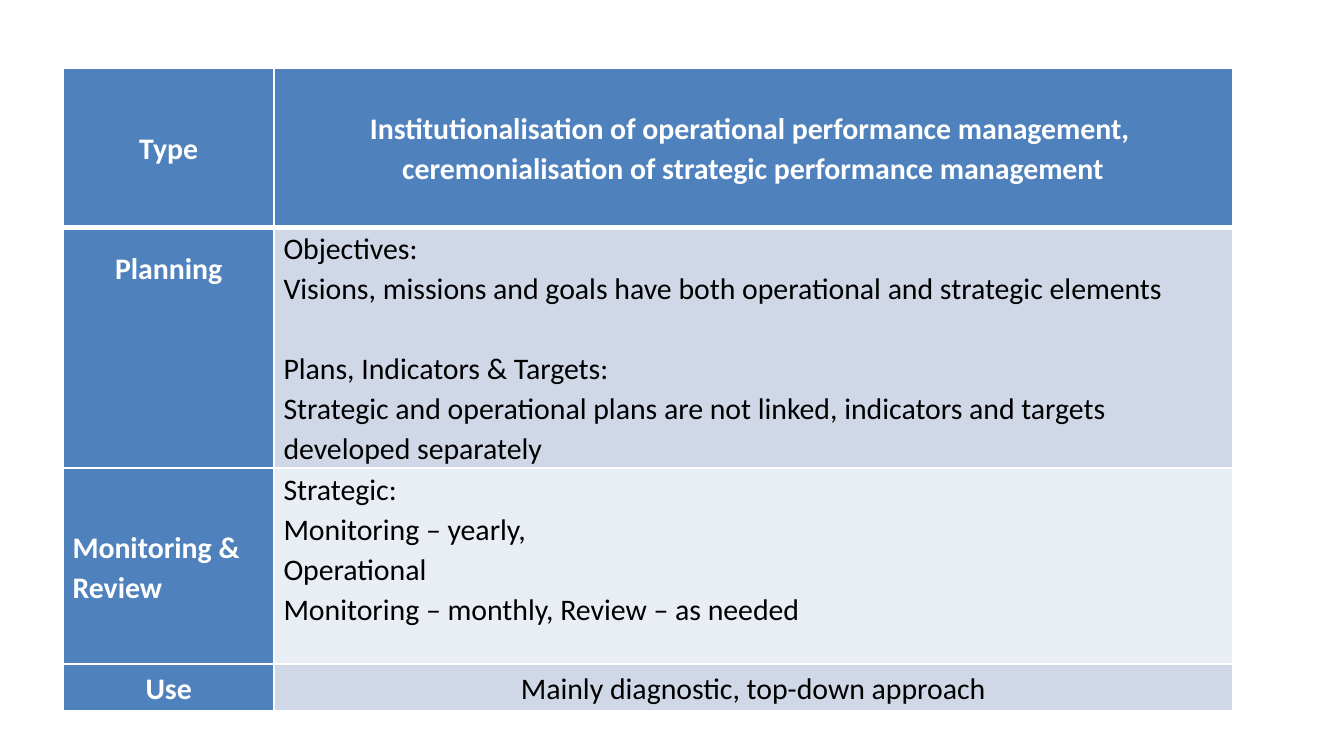
from lxml.etree import SubElement
from pptx import Presentation
from pptx.dml.color import RGBColor
from pptx.enum.text import MSO_ANCHOR, PP_ALIGN
from pptx.oxml.ns import qn
from pptx.util import Inches, Pt

WHITE = RGBColor(0xFF, 0xFF, 0xFF)
BLACK = RGBColor(0, 0, 0)
BLUE = RGBColor(0x4F, 0x81, 0xBD)
MID = RGBColor(0xD0, 0xD8, 0xE8)
PALE = RGBColor(0xE9, 0xED, 0xF4)

WIDTH = 10
COLS = [1.57, 7.13]
ROWS = [1.18, 1.68, 1.46, 0.35]
LABELS = ["Type", "Planning", "Monitoring & Review", "Use"]
NOTES = [
    ["Institutionalisation of operational performance management, ",
     "ceremonialisation of strategic performance management"],
    ["Objectives:",
     "Visions, missions and goals have both operational and strategic elements",
     "Plans, Indicators & Targets:",
     "Strategic and operational plans are not linked, indicators and targets "
     "developed separately"],
    ["Strategic:", "Monitoring – yearly,", "Operational",
     "Monitoring – monthly, Review – as needed"],
    ["Mainly diagnostic, top-down approach"],
]
FILLS = [BLUE, MID, PALE, MID]


def add_edges(cell, widths):
    """Draw white left, right, top and bottom borders, in that order."""
    props = cell._tc.get_or_add_tcPr()
    for spot, (side, width) in enumerate(zip("LRTB", widths)):
        line = props.makeelement(qn(f"a:ln{side}"), {"w": str(Pt(width))})
        fill = SubElement(line, qn("a:solidFill"))
        SubElement(fill, qn("a:srgbClr"), val=str(WHITE))
        props.insert(spot, line)


def fill_cell(cell, lines, fill, color, bold, centred, anchor):
    cell.fill.solid()
    cell.fill.fore_color.rgb = fill
    cell.vertical_anchor = anchor
    cell.margin_left = cell.margin_right = Inches(0.07)
    cell.margin_top = cell.margin_bottom = 0
    frame = cell.text_frame
    frame.text = "\n".join(lines)
    for para in frame.paragraphs:
        para.alignment = PP_ALIGN.CENTER if centred else PP_ALIGN.LEFT
        para.line_spacing = 1.1
        for run in para.runs:
            font = run.font
            font.name, font.size, font.bold = "Calibri", Pt(16), bold
            font.color.rgb = color


def add_grid(slide):
    frame = slide.shapes.add_table(
        len(ROWS), len(COLS), Inches(0.47), Inches(0.51),
        Inches(sum(COLS)), Inches(sum(ROWS)))
    table = frame.table
    for col, width in zip(table.columns, COLS):
        col.width = Inches(width)
    for row, height in zip(table.rows, ROWS):
        row.height = Inches(height)

    middle, top = MSO_ANCHOR.MIDDLE, MSO_ANCHOR.TOP
    for i, (label, notes, fill) in enumerate(zip(LABELS, NOTES, FILLS)):
        head = i == 0
        short = head or label == "Use"
        name, body = table.cell(i, 0), table.cell(i, 1)
        fill_cell(name, [label], BLUE, WHITE, True,
                  label != "Monitoring & Review",
                  top if label == "Planning" else middle)
        fill_cell(body, notes, fill, WHITE if head else BLACK, head,
                  short, middle if short else top)
        for cell in (name, body):
            add_edges(cell, (1, 1, 3 if i == 1 else 1, 3 if head else 1))

    table.cell(1, 0).margin_top = Inches(0.15)
    plans = table.cell(1, 1).text_frame.paragraphs[2]
    plans.space_before = Pt(21.5)


def main():
    deck = Presentation()
    deck.slide_width = Inches(WIDTH)
    deck.slide_height = Inches(WIDTH * 9 / 16)
    slide = deck.slides.add_slide(deck.slide_layouts[6])
    add_grid(slide)
    deck.save("out.pptx")


if __name__ == "__main__":
    main()
